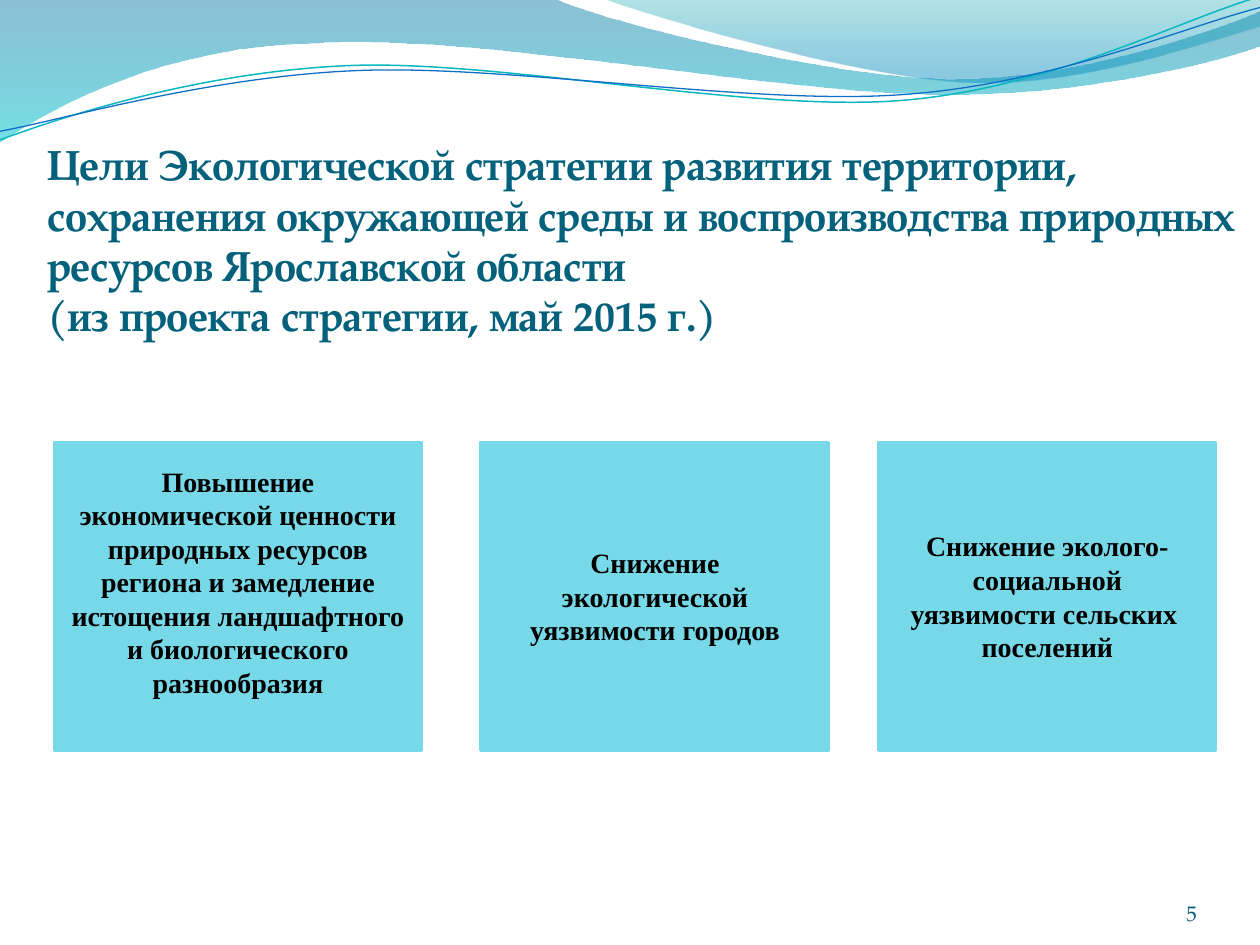
from lxml import etree
from pptx import Presentation
from pptx.dml.color import RGBColor
from pptx.enum import text
from pptx.enum.shapes import MSO_SHAPE
from pptx.oxml.ns import qn
from pptx.util import Pt

TEAL = RGBColor(0x04, 0x61, 0x7B)
NUMBER_TEAL = RGBColor(0x04, 0x5C, 0x75)
AQUA = RGBColor(0x77, 0xD9, 0xE8)
BLACK = RGBColor(0, 0, 0)
DEEP_BLUE = RGBColor(0x00, 0x74, 0xA1)
CYAN = RGBColor(0x00, 0xC6, 0xCF)
SEA_GREEN = RGBColor(0x00, 0xA1, 0xA9)
SKY_BLUE = RGBColor(0x00, 0x8B, 0xBF)
LINE_CYAN = RGBColor(0x0A, 0xB8, 0xBF)
LINE_BLUE = RGBColor(0x0F, 0x6F, 0xC6)
SERIF, BOX_FONT = "TeX Gyre Pagella", "Times New Roman"

# Content
TITLE = ("Цели Экологической стратегии развития территории, сохранения окружающей "
         "среды и воспроизводства природных ресурсов Ярославской области \v"
         "(из проекта стратегии, май 2015 г.)")
PAGE_NUMBER = "5"
# Goals: left, width, extra space below the text, paragraphs
GOALS = [
    (31.2, 209.5, 16.5, ["Повышение экономической ценности природных ресурсов региона и "
                         "замедление истощения ландшафтного и биологического разнообразия"]),
    (275, 198.5, 0, ["Снижение экологической уязвимости городов"]),
    (502.4, 192.2, 0, ["Снижение эколого-социальной", "уязвимости сельских ", "поселений"]),
]
GOAL_TOP, GOAL_HEIGHT = 252.8, 175.7

# Paths: a start point, then steps of one point (line) or three points (curve)
WAVES = [
    ([(0, 0), [(317, -0.7)],
      [(343, 12), (478, 45), (546, 45)], [(614, 45), (690, 19), (720, 6.5)],
      [(720.7, 26)],
      [(708, 32), (626, 55), (537, 54)], [(448, 54), (275, 20), (185, 24.5)],
      [(93, 26), (33, 60), (-0.7, 81.5)]],
     [(0, DEEP_BLUE, 45), (1, CYAN, 55)]),
    ([(345, -0.7),
      [(366.5, 8), (491, 44.6), (553.7, 46.8)], [(616, 49.7), (692, 23), (720, 15)],
      [(720, 0)]],
     [(0, SEA_GREEN, 30), (0.8, SKY_BLUE, 45)]),
]
STRANDS = [
    ([(-1.4, 63), [(33.7, 51.7), (114.3, 29.4), (199.9, 30)],
      [(284.9, 30.5), (425.9, 67.2), (512.6, 64.8)],
      [(599.3, 62.3), (676.1, 25.9), (720.1, 15.5)]],
     LINE_CYAN, 0.85),
    ([(-1.1, 58), [(33.1, 53.6), (118.2, 32.5), (204.1, 33)],
      [(290.4, 33.4), (429.1, 63.8), (515.3, 61.4)],
      [(601.5, 59.4), (678.4, 30), (721.4, 21.3)]],
     LINE_BLUE, 0.75),
]
STRAND_TILT = 357.3


def draw_path(slide, path, close):
    start, *steps = path
    builder = slide.shapes.build_freeform(Pt(start[0]), Pt(start[1]))
    builder.add_line_segments([(Pt(x), Pt(y)) for step in steps for x, y in step],
                              close=close)
    shape = builder.convert_to_shape()
    shape.shadow.inherit = False

    # Join the three points of each curve step into one Bezier segment
    segments = iter(list(shape.element.iter(qn("a:lnTo"))))
    for step in steps:
        first, *others = [next(segments) for _ in step]
        if others:
            first.tag = qn("a:cubicBezTo")
        for other in others:
            first.append(other[0])
            other.getparent().remove(other)
    return shape


def fill_gradient(shape, stops):
    shape.fill.gradient()
    shape.fill.gradient_angle = 270
    for stop, (position, color, _) in zip(shape.fill.gradient_stops, stops):
        stop.position = position
        stop.color.rgb = color
    for node, (_, _, opacity) in zip(shape.element.iter(qn("a:srgbClr")), stops):
        etree.SubElement(node, qn("a:alpha"), val=str(opacity * 1000))


def write(shape, paragraphs, *, font, size, color, bold=False,
          align=text.PP_ALIGN.LEFT, anchor=text.MSO_ANCHOR.TOP):
    frame = shape.text_frame
    frame.text = "\n".join(paragraphs)
    frame.word_wrap = True
    frame.auto_size = text.MSO_AUTO_SIZE.NONE
    frame.vertical_anchor = anchor
    for paragraph in frame.paragraphs:
        paragraph.alignment = align
        for run in paragraph.runs:
            run.font.name, run.font.size, run.font.bold = font, Pt(size), bold
            run.font.color.rgb = color
    return frame


def main():
    deck = Presentation()
    deck.slide_width, deck.slide_height = Pt(720), Pt(540)
    slide = deck.slides.add_slide(deck.slide_layouts[5])

    # Waves and strands across the top
    for path, stops in WAVES:
        wave = draw_path(slide, path, close=True)
        fill_gradient(wave, stops)
        wave.line.fill.background()
    for path, color, width in STRANDS:
        strand = draw_path(slide, path, close=False)
        strand.rotation = STRAND_TILT
        strand.fill.background()
        strand.line.color.rgb, strand.line.width = color, Pt(width)

    # Title
    title = slide.shapes.title
    title.left, title.top, title.width, title.height = Pt(19.8), Pt(75.6), Pt(711.5), Pt(124)
    write(title, [TITLE], font=SERIF, size=24, color=TEAL, bold=True)

    # Goals
    for left, width, space_below, paragraphs in GOALS:
        goal = slide.shapes.add_shape(MSO_SHAPE.RECTANGLE, Pt(left), Pt(GOAL_TOP),
                                      Pt(width), Pt(GOAL_HEIGHT))
        goal.shadow.inherit = False
        goal.fill.solid()
        goal.fill.fore_color.rgb = goal.line.color.rgb = AQUA
        goal.line.width = Pt(2)
        frame = write(goal, paragraphs, font=BOX_FONT, size=16, color=BLACK, bold=True,
                      align=text.PP_ALIGN.CENTER, anchor=text.MSO_ANCHOR.MIDDLE)
        frame.margin_bottom = Pt(3.6 + space_below)

    # Page number
    number = slide.shapes.add_textbox(Pt(624), Pt(500.4), Pt(60), Pt(28.8))
    frame = write(number, [PAGE_NUMBER], font=SERIF, size=12, color=NUMBER_TEAL,
                  align=text.PP_ALIGN.RIGHT, anchor=text.MSO_ANCHOR.BOTTOM)
    frame.margin_left = frame.margin_right = frame.margin_top = frame.margin_bottom = 0

    deck.save("out.pptx")


if __name__ == "__main__":
    main()
